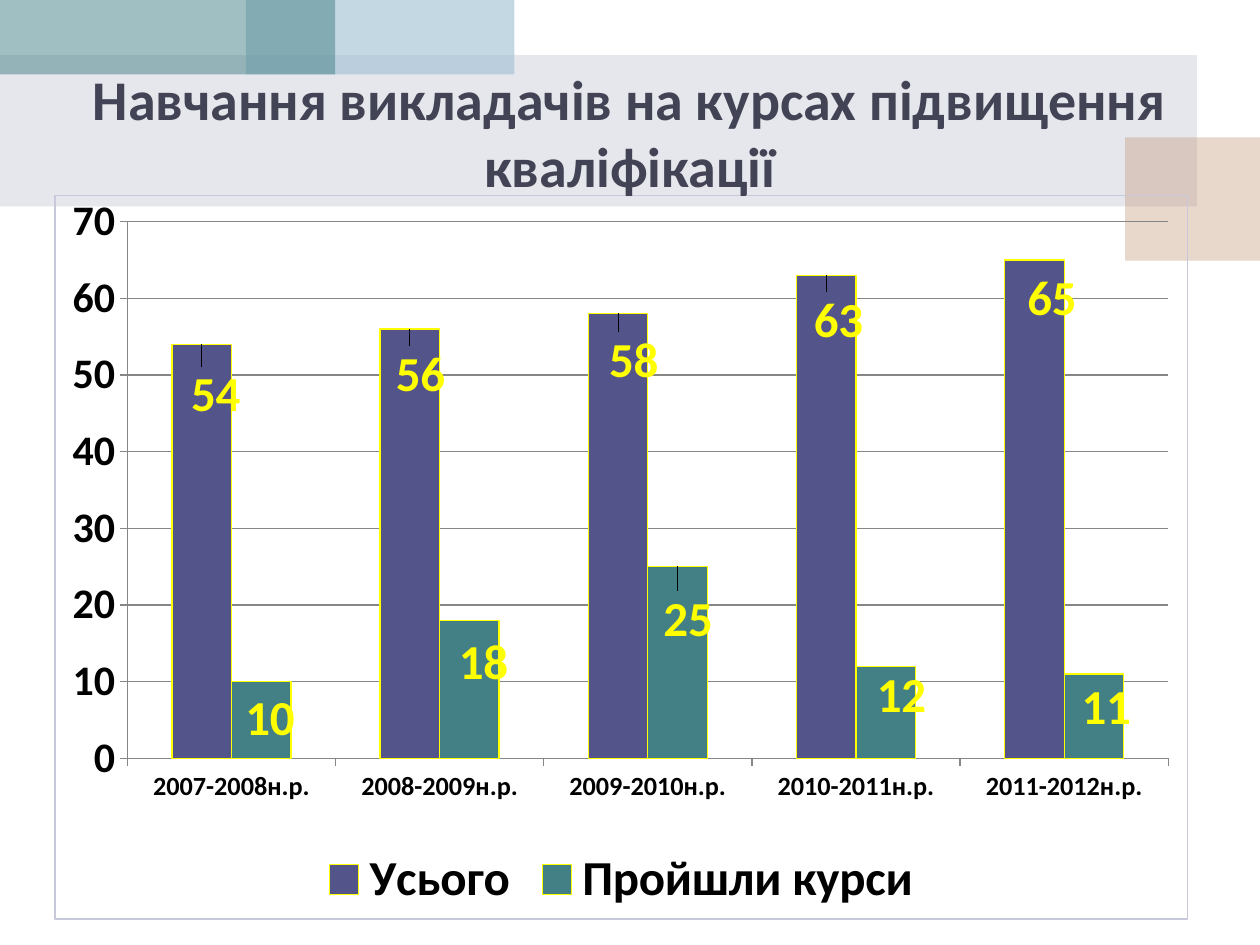
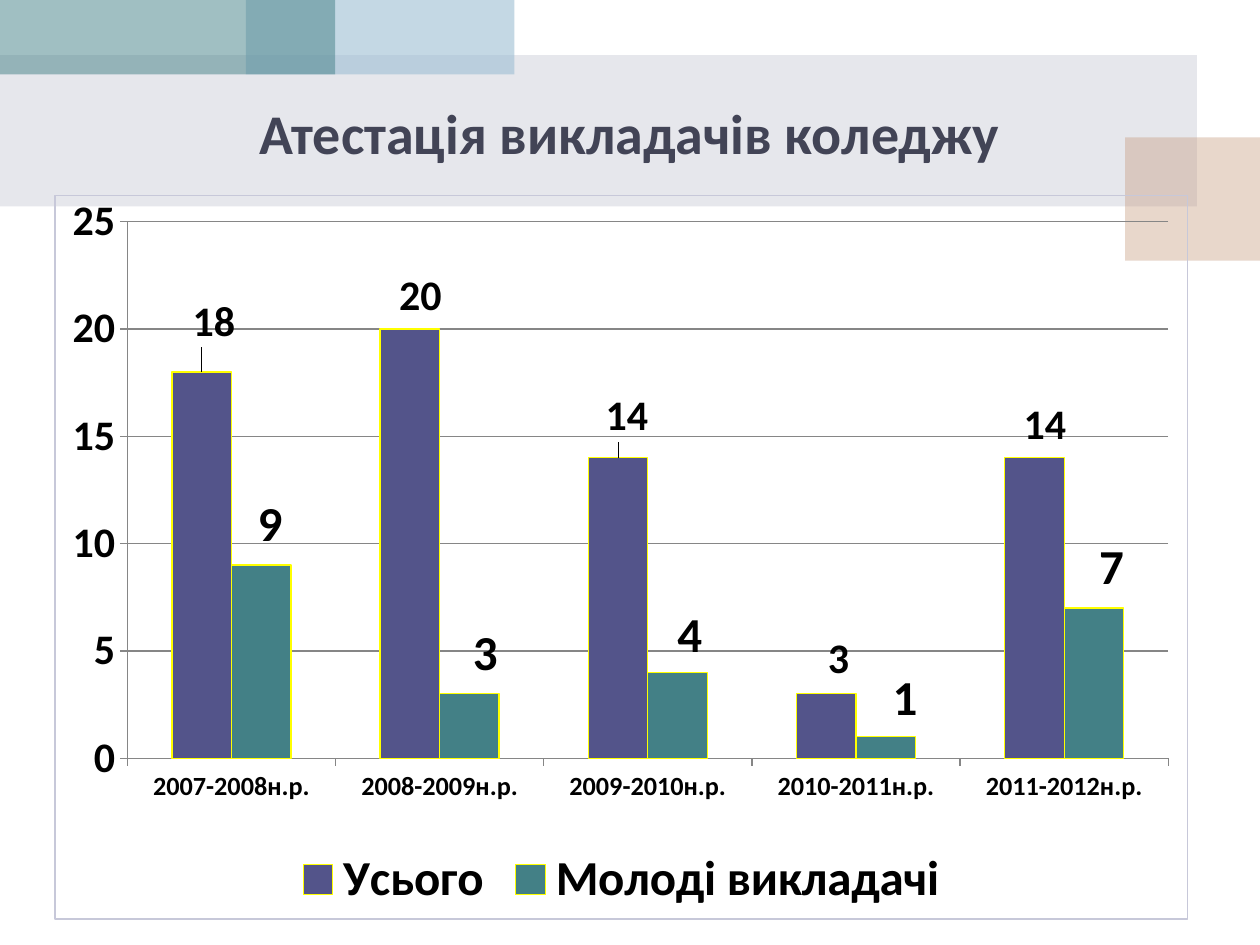
from lxml import etree
from pptx import Presentation
from pptx.chart.data import CategoryChartData
from pptx.dml.color import RGBColor
from pptx.enum.chart import XL_CHART_TYPE as CT, XL_LABEL_POSITION as LP
from pptx.enum.chart import XL_LEGEND_POSITION as LEG, XL_TICK_MARK as TICK
from pptx.enum.shapes import MSO_SHAPE as SHP
from pptx.enum.text import MSO_ANCHOR, PP_ALIGN
from pptx.oxml import parse_xml
from pptx.oxml.ns import nsdecls, qn
from pptx.util import Pt

FONT = "Calibri"
BLACK = RGBColor(0x00, 0x00, 0x00)
YELLOW = RGBColor(0xFF, 0xFF, 0x00)
TITLE = RGBColor(0x42, 0x44, 0x56)
INDIGO = RGBColor(0x53, 0x54, 0x8A)
TEAL = RGBColor(0x43, 0x80, 0x86)
LAVENDER = RGBColor(0xAE, 0xB0, 0xC1)
TAN = RGBColor(0xC6, 0x9B, 0x7E)
SKY = RGBColor(0x9D, 0xBE, 0xD3)
GRAY = RGBColor(0x86, 0x86, 0x86)
BORDER = RGBColor(0xC7, 0xC8, 0xD9)

# Bands behind the title: left, top, width, height, colour, opacity in percent
BANDS = [
    (0, 31.5, 684, 86.5, LAVENDER, 30),
    (643, 78.5, 77, 70.5, TAN, 40),
    (140.5, 0, 153.5, 42.5, SKY, 60),
    (0, 0, 191.5, 42.5, TEAL, 50),
]
CHART_W, CHART_H = 648, 414
PLOT = {"x": 0.064, "y": 0.036, "w": 0.919, "h": 0.742}
YEARS = [f"{y}-{y + 1}н.р." for y in range(2007, 2012)]

# Title, axis maximum, axis step, then the series:
# name, values, label size, label colour, label shifts (right, down) in points
SLIDES = [
    ("Навчання викладачів на курсах підвищення кваліфікації", 70, 10, [
        ("Усього", (54, 56, 58, 63, 65), 28, YELLOW,
         [(8, 49), (6, 46), (9, 47), (7, 46), (10, 42)]),
        ("Пройшли курси", (10, 18, 25, 12, 11), 28, YELLOW,
         [(5, 41), (8, 44), (6, 50), (9, 37), (7, 39)]),
    ]),
    ("Атестація викладачів коледжу", 25, 5, [
        ("Усього", (18, 20, 14, 3, 14), 24, BLACK,
         [(7, -11), (6, -1), (5, -6), (7, -2), (6, -1)]),
        ("Молоді викладачі", (9, 3, 4, 1, 7), 28, BLACK,
         [(5, -3), (9, -3), (7, -1), (11, -2), (10, -3)]),
    ]),
]


def manual_layout(**parts):
    tags = "".join(f'<c:{k} val="{v}"/>' for k, v in parts.items())
    return parse_xml(f'<c:layout {nsdecls("c")}><c:manualLayout>{tags}'
                     '</c:manualLayout></c:layout>')


def set_font(font, size, color=BLACK):
    font.name, font.size, font.bold = FONT, Pt(size), True
    font.color.rgb = color


prs = Presentation()
prs.slide_width, prs.slide_height = Pt(720), Pt(540)

for title, top, step, series in SLIDES:
    s = prs.slides.add_slide(prs.slide_layouts[6])

    # Translucent bands
    for x, y, w, h, color, opacity in BANDS:
        sp = s.shapes.add_shape(SHP.RECTANGLE, Pt(x), Pt(y), Pt(w), Pt(h))
        sp.shadow.inherit = False
        sp.line.fill.background()
        sp.fill.solid()
        sp.fill.fore_color.rgb = color
        clr = sp.fill._xPr.find(".//" + qn("a:srgbClr"))
        etree.SubElement(clr, qn("a:alpha")).set("val", str(opacity * 1000))

    # Chart
    data = CategoryChartData(number_format="0")
    data.categories = YEARS
    for name, values, *_ in series:
        data.add_series(name, values)
    chart = s.shapes.add_chart(CT.COLUMN_CLUSTERED, Pt(31), Pt(111.5),
                               Pt(CHART_W), Pt(CHART_H), data).chart
    chart.has_title = False
    chart.font.name, chart.font.size = FONT, Pt(18)
    chart.font.color.rgb = BLACK
    chart._chartSpace.chart.addnext(parse_xml(
        f'<c:spPr {nsdecls("c", "a")}><a:noFill/><a:ln w="{Pt(0.75)}"><a:solidFill>'
        f'<a:srgbClr val="{BORDER}"/></a:solidFill></a:ln></c:spPr>'))
    area = chart._chartSpace.chart.plotArea
    for old in area.findall(qn("c:layout")):
        area.remove(old)
    area.insert(0, manual_layout(layoutTarget="inner", xMode="edge",
                                 yMode="edge", **PLOT))

    # Axes and legend
    cat, val = chart.category_axis, chart.value_axis
    for axis, size in ((cat, 15), (val, 24)):
        set_font(axis.tick_labels.font, size)
        axis.major_tick_mark, axis.minor_tick_mark = TICK.OUTSIDE, TICK.NONE
        axis.format.line.color.rgb = GRAY
    val.minimum_scale, val.maximum_scale, val.major_unit = 0, top, step
    val.tick_labels.number_format = "0"
    val.tick_labels.number_format_is_linked = False
    val.has_major_gridlines = True
    val.major_gridlines.format.line.color.rgb = GRAY
    chart.has_legend = True
    chart.legend.position = LEG.BOTTOM
    chart.legend.include_in_layout = False
    set_font(chart.legend.font, 28)

    # Columns and their shifted value labels
    plot = chart.plots[0]
    plot.gap_width, plot.overlap, plot.vary_by_categories = 150, 0, False
    for ser, color, spec in zip(plot.series, (INDIGO, TEAL), series):
        _, _, size, label_color, shifts = spec
        ser.format.fill.solid()
        ser.format.fill.fore_color.rgb = color
        ser.format.line.color.rgb = YELLOW
        ser.format.line.width = Pt(0.75)
        labels = ser.data_labels
        labels.show_value = True
        labels.number_format, labels.number_format_is_linked = "0", False
        labels.position = LP.OUTSIDE_END
        set_font(labels.font, size, label_color)
        for i in range(len(shifts)):
            label = ser.points[i].data_label
            set_font(label.font, size, label_color)
            label.position = LP.OUTSIDE_END
        for tag, (dx, dy) in zip(labels._element.findall(qn("c:dLbl")), shifts):
            tag.insert(1, manual_layout(x=round(dx / CHART_W, 4),
                                        y=round(dy / CHART_H, 4)))

    # Title
    tf = s.shapes.add_textbox(Pt(8.5), Pt(37.5), Pt(703), Pt(75.5)).text_frame
    tf.word_wrap = True
    tf.vertical_anchor = MSO_ANCHOR.MIDDLE
    p = tf.paragraphs[0]
    p.text, p.alignment = title, PP_ALIGN.CENTER
    set_font(p.font, 32, TITLE)

prs.save("out.pptx")
